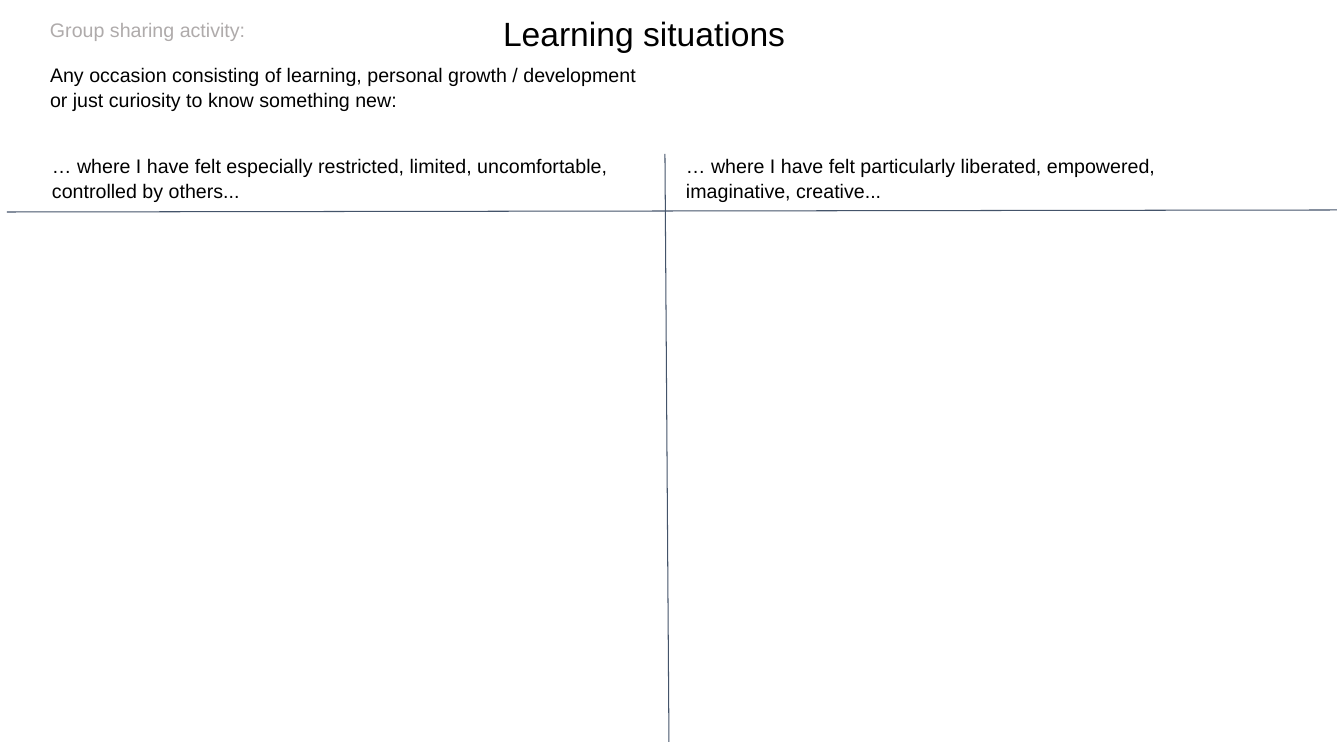
import pptx
import pptx.dml.color
import pptx.enum.shapes
import pptx.enum.text
import pptx.oxml.ns
import pptx.util
from lxml import etree

PX = 914400 / 100.8


def px(length):
    return pptx.util.Emu(round(length * PX))


def write(frame, text, size, color, inset_y=10):
    """Fill a text frame with one left-aligned run, anchored at the top."""
    frame.margin_left = frame.margin_right = px(10)
    frame.margin_top = frame.margin_bottom = px(inset_y)
    frame.vertical_anchor = pptx.enum.text.MSO_ANCHOR.TOP
    paragraph = frame.paragraphs[0]
    paragraph.alignment = pptx.enum.text.PP_ALIGN.LEFT
    paragraph.line_spacing = 1.07
    run = paragraph.add_run()
    run.text = text
    run.font.name = "Arial"
    run.font.size = pptx.util.Pt(size)
    run.font.color.rgb = pptx.dml.color.RGBColor.from_string(color)


deck = pptx.Presentation()
deck.slide_width, deck.slide_height = px(1344), px(756)
slide = deck.slides.add_slide(deck.slide_layouts[5])

# Dividers between the two columns and below their headings
dividers = [(665, 154, 669, 742), (7, 212, 1337, 210)]
for ends in dividers:
    divider = slide.shapes.add_connector(
        pptx.enum.shapes.MSO_CONNECTOR.STRAIGHT, *map(px, ends))
    divider.line.color.rgb = pptx.dml.color.RGBColor.from_string("44546A")
    divider.line.width = pptx.util.Pt(0.75)
    etree.SubElement(divider._element.spPr, pptx.oxml.ns.qn("a:effectLst"))

# Title
title = slide.shapes.title
title.left, title.top, title.width, title.height = map(px, (493, 0, 307, 59))
title.text_frame.auto_size = pptx.enum.text.MSO_AUTO_SIZE.NONE
title.text_frame.word_wrap = True
write(title.text_frame, "Learning situations", 24, "000000")

# Prompt and column headings
prompts = [
    (42, 142, 625, "… where I have felt especially restricted, limited, "
                   "uncomfortable, controlled by others..."),
    (676, 142, 578, "… where I have felt particularly liberated, empowered, "
                    "imaginative, creative..."),
    (40, 51, 625, "Any occasion consisting of learning, personal growth / "
                  "development or just curiosity to know something new:"),
]
for left, top, width, text in prompts:
    prompt = slide.shapes.add_textbox(px(left), px(top), px(width), px(59))
    prompt.text_frame.word_wrap = True
    write(prompt.text_frame, text, 14, "000000")

# Activity label
activity = slide.shapes.add_textbox(px(40), px(11), px(217), px(34))
activity.text_frame.word_wrap = False
activity.text_frame.auto_size = pptx.enum.text.MSO_AUTO_SIZE.SHAPE_TO_FIT_TEXT
write(activity.text_frame, "Group sharing activity:", 14, "AFABAB", inset_y=5)

deck.save("out.pptx")
